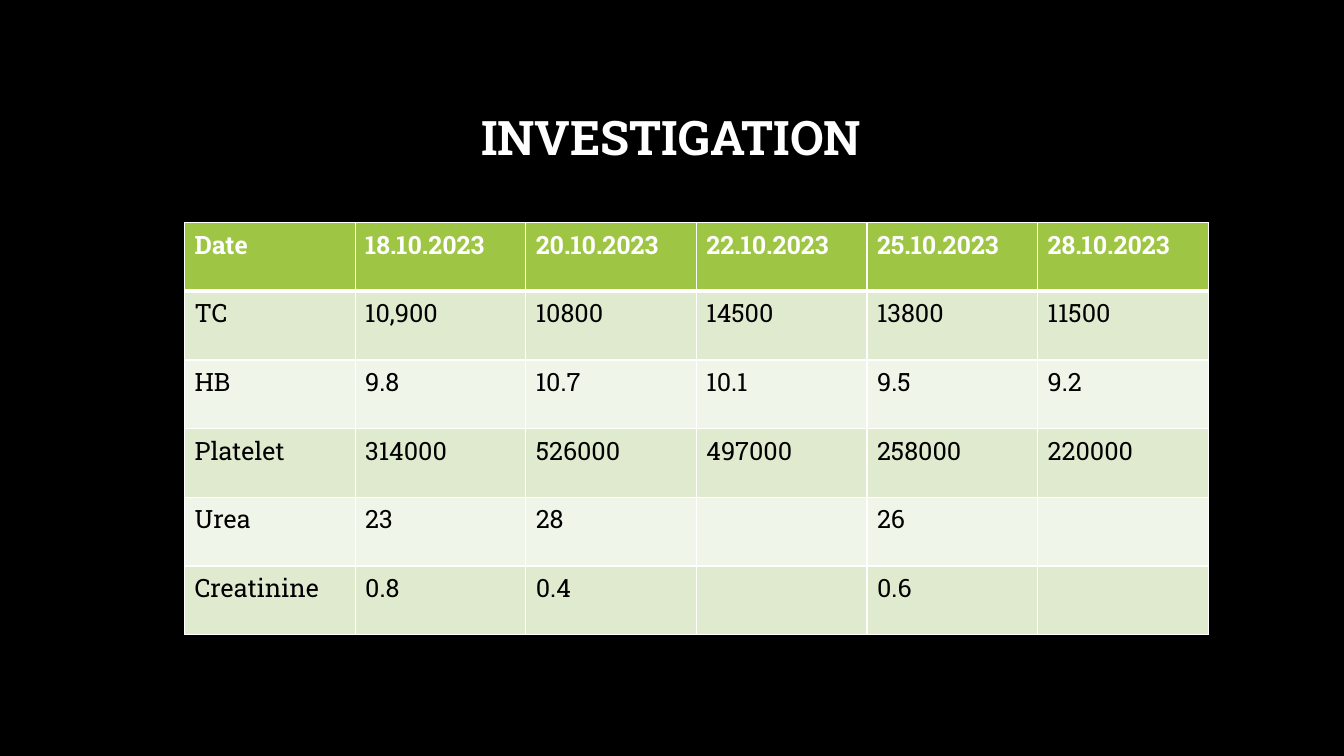
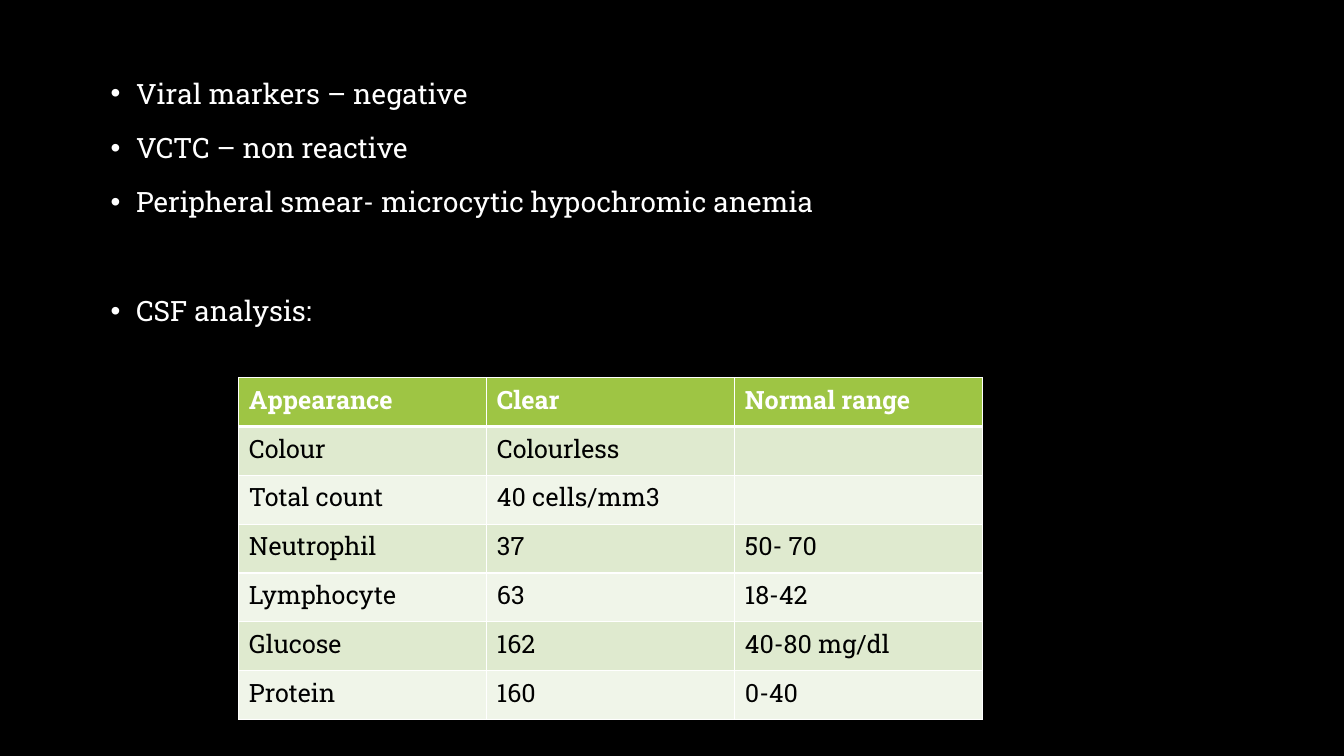
from dataclasses import dataclass

from lxml import etree
from pptx import Presentation
from pptx.dml.color import RGBColor
from pptx.enum import text
from pptx.oxml import ns
from pptx.util import Cm, Pt

FONT = "Roboto Slab"
BLACK, WHITE = "000000", "FFFFFF"
HEADER_FILL = "9EC544"
BAND_FILLS = ("DFEACF", "F0F5E9")
MARGIN_LEFT, CONTENT_WIDTH = 2.54, 28.75
THIN, THICK = 1, 3


@dataclass(frozen=True)
class Grid:
    """A table with equal columns and equal rows; lengths in centimetres."""
    left: float
    top: float
    column_width: float
    row_height: float
    rows: tuple[tuple[str, ...], ...]


@dataclass(frozen=True)
class Bullet:
    wording: str
    space_before: float = 10


INVESTIGATION = Grid(4.65, 5.61, 4.3, 1.73, (
    ("Date", "18.10.2023", "20.10.2023", "22.10.2023", "25.10.2023", "28.10.2023"),
    ("TC", "10,900", "10800", "14500", "13800", "11500"),
    ("HB", "9.8", "10.7", "10.1", "9.5", "9.2"),
    ("Platelet", "314000", "526000", "497000", "258000", "220000"),
    ("Urea", "23", "28", "", "26", ""),
    ("Creatinine", "0.8", "0.4", "", "0.6", ""),
))

CSF_ANALYSIS = Grid(6.02, 9.52, 6.25, 1.23, (
    ("Appearance", "Clear", "Normal range"),
    ("Colour", "Colourless", ""),
    ("Total count", "40 cells/mm3", ""),
    ("Neutrophil", "37", "50- 70"),
    ("Lymphocyte", "63", "18-42"),
    ("Glucose", "162", "40-80 mg/dl"),
    ("Protein", "160", "0-40"),
))

FINDINGS = (
    Bullet("Viral markers – negative"),
    Bullet("VCTC – non reactive"),
    Bullet("Peripheral smear- microcytic hypochromic anemia"),
    Bullet("CSF analysis:", space_before=48.8),
)


def rgb(colour: str) -> RGBColor:
    return RGBColor.from_string(colour)


def style_font(paragraph, size: float, colour: str, bold: bool = False) -> None:
    font = paragraph.font
    font.name, font.size, font.bold = FONT, Pt(size), bold
    font.color.rgb = rgb(colour)


def add_text_frame(slide, top: float, height: float):
    """Return the wrapping text frame of a box across the content width."""
    box = slide.shapes.add_textbox(Cm(MARGIN_LEFT), Cm(top), Cm(CONTENT_WIDTH), Cm(height))
    box.text_frame.word_wrap = True
    return box.text_frame


def add_title(slide, wording: str) -> None:
    frame = add_text_frame(slide, 1.7, 3.68)
    frame.vertical_anchor = text.MSO_ANCHOR.MIDDLE
    title = frame.paragraphs[0]
    title.text = wording
    title.alignment = text.PP_ALIGN.CENTER
    title.line_spacing = 0.9
    style_font(title, 34, WHITE, bold=True)


def add_bullets(slide, bullets: tuple[Bullet, ...]) -> None:
    frame = add_text_frame(slide, 1.63, 17.02)
    for index, bullet in enumerate(bullets):
        paragraph = frame.add_paragraph() if index else frame.paragraphs[0]
        paragraph.text = bullet.wording
        properties = paragraph._p.get_or_add_pPr()
        indent = Cm(0.64)
        properties.set("marL", str(indent))
        properties.set("indent", str(-indent))
        etree.SubElement(properties, ns.qn("a:buFont"), typeface="Arial")
        etree.SubElement(properties, ns.qn("a:buChar"), char="•")
        paragraph.line_spacing = 1.2
        paragraph.space_before = Pt(bullet.space_before)
        style_font(paragraph, 20, WHITE)


def set_borders(cell, top: float, bottom: float) -> None:
    properties = cell._tc.get_or_add_tcPr()
    for side, width in (("L", THIN), ("R", THIN), ("T", top), ("B", bottom)):
        line = etree.SubElement(properties, ns.qn(f"a:ln{side}"), w=str(Pt(width)))
        fill = etree.SubElement(line, ns.qn("a:solidFill"))
        etree.SubElement(fill, ns.qn("a:srgbClr"), val=WHITE)


def add_grid(slide, grid: Grid) -> None:
    row_count, column_count = len(grid.rows), len(grid.rows[0])
    table = slide.shapes.add_table(
        row_count, column_count, Cm(grid.left), Cm(grid.top),
        Cm(grid.column_width * column_count), Cm(grid.row_height * row_count)).table
    for column in table.columns:
        column.width = Cm(grid.column_width)
    for row_index, entries in enumerate(grid.rows):
        table.rows[row_index].height = Cm(grid.row_height)
        is_header = row_index == 0
        for column_index, entry in enumerate(entries):
            cell = table.cell(row_index, column_index)
            set_borders(cell, top=THICK if row_index == 1 else THIN,
                        bottom=THICK if is_header else THIN)
            cell.fill.solid()
            cell.fill.fore_color.rgb = rgb(
                HEADER_FILL if is_header else BAND_FILLS[(row_index - 1) % 2])
            if entry:
                cell.text = entry
                style_font(cell.text_frame.paragraphs[0], 18,
                           WHITE if is_header else BLACK, bold=is_header)


def main() -> None:
    deck = Presentation()
    deck.slide_width, deck.slide_height = Cm(33.87), Cm(19.05)
    background = deck.slide_master.background.fill
    background.solid()
    background.fore_color.rgb = rgb(BLACK)
    blank = deck.slide_layouts[6]

    investigation = deck.slides.add_slide(blank)
    add_grid(investigation, INVESTIGATION)
    add_title(investigation, "INVESTIGATION")

    findings = deck.slides.add_slide(blank)
    add_bullets(findings, FINDINGS)
    add_grid(findings, CSF_ANALYSIS)

    deck.save("out.pptx")


if __name__ == "__main__":
    main()
